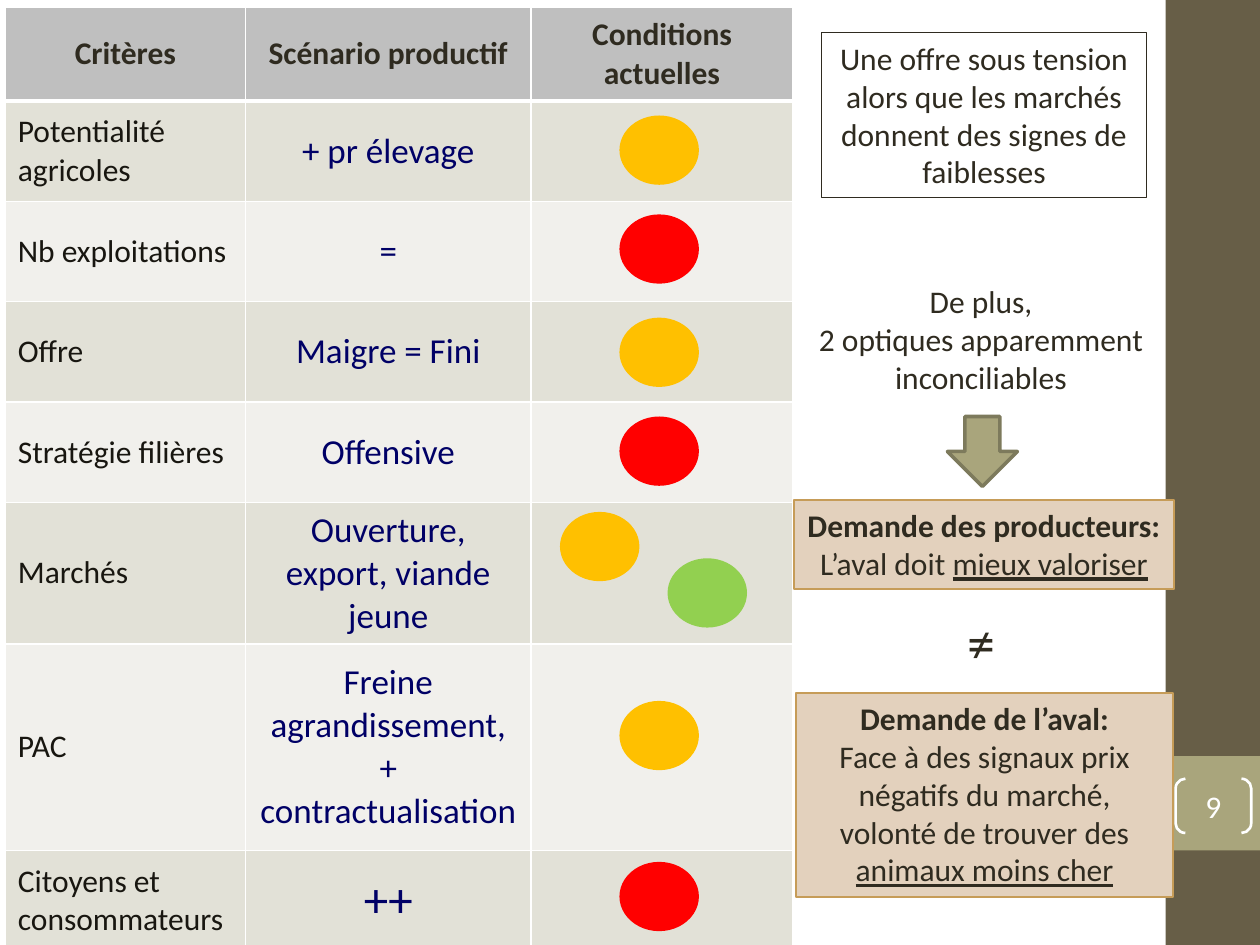
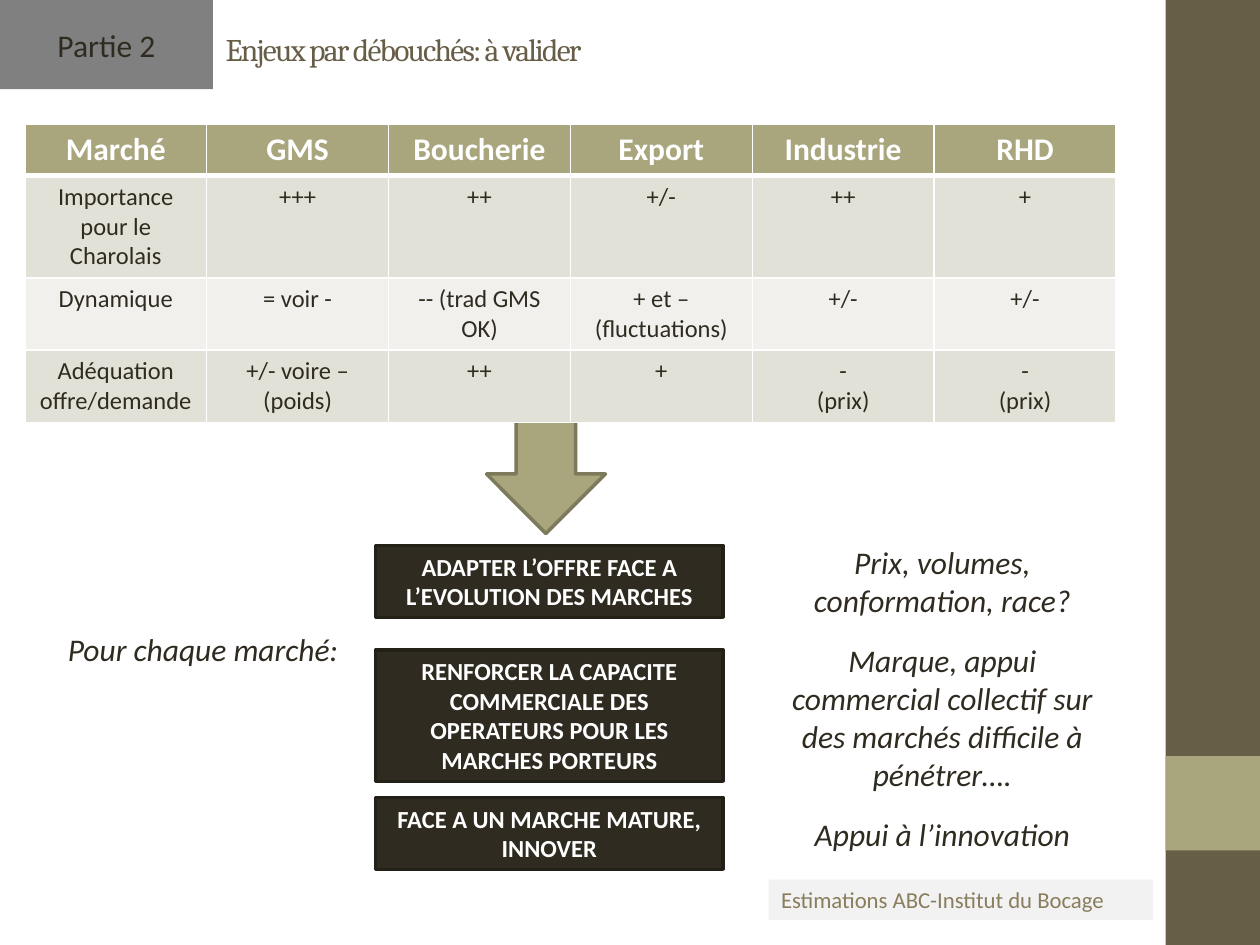
from lxml import etree
from pptx import Presentation
from pptx.dml.color import RGBColor
from pptx.enum import shapes, text
from pptx.oxml import ns
from pptx.util import Pt

WHITE = RGBColor(0xFF, 0xFF, 0xFF)
INK = RGBColor(0x2F, 0x2B, 0x20)
INK_EDGE = RGBColor(0x23, 0x20, 0x18)
CRITERION = RGBColor(0x18, 0x16, 0x10)
NAVY = RGBColor(0x00, 0x00, 0x66)
BROWN = RGBColor(0x67, 0x5E, 0x47)
SOURCE_BROWN = RGBColor(0x89, 0x7D, 0x5D)
OLIVE = RGBColor(0xA9, 0xA5, 0x7C)
OLIVE_EDGE = RGBColor(0x7D, 0x7A, 0x5C)
SAND = RGBColor(0xE3, 0xD1, 0xBD)
SAND_EDGE = RGBColor(0xC6, 0x9C, 0x58)
HEADER_GREY = RGBColor(0xBF, 0xBF, 0xBF)
PART_GREY = RGBColor(0x80, 0x80, 0x80)
SOURCE_GREY = RGBColor(0xF2, 0xF2, 0xF2)
BANDS = RGBColor(0xF1, 0xF0, 0xEC), RGBColor(0xE2, 0xE1, 0xD7)
ORANGE = RGBColor(0xFF, 0xC0, 0x00)
RED = RGBColor(0xFF, 0x00, 0x00)
GREEN = RGBColor(0x92, 0xD0, 0x50)

FORM = shapes.MSO_SHAPE
LEFT, CENTER = text.PP_ALIGN.LEFT, text.PP_ALIGN.CENTER
TOP, MIDDLE = text.MSO_ANCHOR.TOP, text.MSO_ANCHOR.MIDDLE


def write(owner, *paragraphs, size=18, color=INK, font="Calibri", bold=False,
          italic=False, align=CENTER, anchor=TOP, wrap=True):
    frame = owner.text_frame
    if hasattr(owner, "vertical_anchor"):
        owner.vertical_anchor = anchor
    else:
        frame.vertical_anchor = anchor
        frame.word_wrap = wrap
    for index, runs in enumerate(paragraphs):
        paragraph = frame.add_paragraph() if index else frame.paragraphs[0]
        paragraph.alignment = align
        for words, style in [(runs, "")] if isinstance(runs, str) else runs:
            run = paragraph.add_run()
            run.text = words
            run.font.name = font
            run.font.size = Pt(size)
            run.font.color.rgb = color
            run.font.bold = bold or style == "bold"
            run.font.italic = italic
            run.font.underline = style == "underline"


def add_box(slide, form, left, top, width, height, fill=None, line=None, weight=1):
    place = [Pt(value) for value in (left, top, width, height)]
    if form is None:
        return slide.shapes.add_textbox(*place)
    shape = slide.shapes.add_shape(form, *place)
    shape.shadow.inherit = False
    if fill is None:
        shape.fill.background()
    else:
        shape.fill.solid()
        shape.fill.fore_color.rgb = fill
    if line is None:
        shape.line.fill.background()
    else:
        shape.line.color.rgb = line
        shape.line.width = Pt(weight)
    return shape


presentation = Presentation()
presentation.slide_width, presentation.slide_height = Pt(720), Pt(540)
criteria_slide = presentation.slides.add_slide(presentation.slide_layouts[6])
markets_slide = presentation.slides.add_slide(presentation.slide_layouts[5])

master_tree = presentation.slide_master.shapes.element
for number, (top, height, fill) in enumerate([(0, 540, BROWN), (432, 54, OLIVE)]):
    band = add_box(criteria_slide, FORM.RECTANGLE, 666, top, 54, height, fill)
    band.element.nvSpPr.cNvPr.id = 100 + number
    master_tree.insert(2 + number, band.element)

title = markets_slide.shapes.title
title.left, title.top, title.width, title.height = Pt(121.7), Pt(9.4), Pt(540), Pt(36.7)
write(title, "Enjeux par débouchés: à valider", color=BROWN, font="Cambria",
      align=LEFT, anchor=MIDDLE)
title.text_frame.paragraphs[0].runs[0].font._element.set("spc", "-100")

for slide, left, top, width, height in [
    (criteria_slide, 541.4, 238, 40, 40),
    (markets_slide, 278, 230.4, 68, 74.5),
]:
    add_box(slide, FORM.DOWN_ARROW, left, top, width, height, OLIVE, OLIVE_EDGE, 2)

criteria_rows = [
    ["Critères", "Scénario productif", "Conditions actuelles"],
    ["Potentialité agricoles", "+ pr élevage", ""],
    ["Nb exploitations", "=", ""],
    ["Offre", "Maigre = Fini", ""],
    ["Stratégie filières", "Offensive", ""],
    ["Marchés", "Ouverture, export, viande jeune", ""],
    ["PAC", "Freine agrandissement, + contractualisation", ""],
    ["Citoyens et consommateurs", "++", ""],
]
market_rows = [
    ["Marché", "GMS", "Boucherie", "Export", "Industrie", "RHD"],
    ["Importance pour le Charolais", "+++", "++", "+/-", "++", "+"],
    ["Dynamique", "= voir -", "-- (trad GMS OK)", "+ et – (fluctuations)", "+/-", "+/-"],
    ["Adéquation offre/demande", "+/- voire –\n(poids)", "++", "+", "-\n(prix)", "-\n(prix)"],
]
criteria_formats = [
    dict(color=CRITERION, align=LEFT, anchor=MIDDLE),
    dict(color=NAVY, size=20, anchor=MIDDLE),
    dict(anchor=MIDDLE),
]
tables = [
    (criteria_slide, criteria_rows, 3, 4.2, [137.3, 163.2, 149.7],
     [53.5, 57.4, 57.4, 57.4, 57.4, 68.6, 118, 57.4],
     HEADER_GREY, dict(color=INK, bold=True, anchor=MIDDLE), criteria_formats),
    (markets_slide, market_rows, 14.2, 71.2, [103.92] * 6, [29.2] * 4,
     OLIVE, dict(color=WHITE, bold=True), [dict(size=14)] * 6),
]
for slide, rows, left, top, widths, heights, header_fill, header_format, formats in tables:
    table = slide.shapes.add_table(
        len(rows), len(widths), Pt(left), Pt(top), Pt(sum(widths)), Pt(sum(heights))).table
    for column, width in zip(table.columns, widths):
        column.width = Pt(width)
    for row_index, row in enumerate(rows):
        table.rows[row_index].height = Pt(heights[row_index])
        for column_index, words in enumerate(row):
            cell = table.cell(row_index, column_index)
            properties = cell._tc.get_or_add_tcPr()
            for side in ("lnL", "lnR", "lnT", "lnB"):
                thick = (row_index, side) in ((0, "lnB"), (1, "lnT"))
                border = etree.SubElement(properties, ns.qn("a:" + side),
                                          w=str(Pt(3 if thick else 1)))
                paint = etree.SubElement(border, ns.qn("a:solidFill"))
                etree.SubElement(paint, ns.qn("a:srgbClr"), val=str(WHITE))
            cell.fill.solid()
            cell.fill.fore_color.rgb = BANDS[row_index % 2] if row_index else header_fill
            style = dict(formats[column_index] if row_index else header_format)
            if slide is criteria_slide and words == "++":
                style["size"] = 28
            if words:
                write(cell, *words.split("\n"), **style)

for left, top, color in [
    (354, 66, ORANGE), (354, 122.5, RED), (354, 181.5, ORANGE), (354, 238, RED),
    (320, 292.5, ORANGE), (381.5, 319, GREEN), (354, 400.5, ORANGE), (354, 492.5, RED),
]:
    add_box(criteria_slide, FORM.OVAL, left, top, 45.4, 39.6, color)

page_number = add_box(criteria_slide, FORM.DOUBLE_BRACKET, 671.8, 445, 43.2, 31,
                      line=WHITE, weight=1.5)
page_number.adjustments[0] = 0.18
write(page_number, "9", color=WHITE, anchor=MIDDLE)

tension = add_box(criteria_slide, FORM.RECTANGLE, 469.4, 18.7, 185.8, 94.3,
                  line=INK, weight=0.75)
write(tension, "Une offre sous tension alors que les marchés donnent des signes de faiblesses")
views = add_box(criteria_slide, None, 459.4, 157.7, 202.3, 72.7)
write(views, "De plus,", "2 optiques apparemment", "inconciliables", wrap=False)
producers = add_box(criteria_slide, FORM.RECTANGLE, 453.6, 285.8, 217.4, 51, SAND, SAND_EDGE)
write(producers, [("Demande des producteurs:", "bold")],
      [("L’aval doit ", ""), ("mieux valoriser", "underline")], wrap=False)
unequal = add_box(criteria_slide, None, 545.8, 343.4, 31, 46)
write(unequal, "≠", size=32, align=LEFT, wrap=False)
downstream = add_box(criteria_slide, FORM.RECTANGLE, 455, 396, 215.3, 116.6, SAND, SAND_EDGE)
write(downstream, [("Demande de l’aval:", "bold")],
      [("Face à des signaux prix négatifs du marché, volonté de trouver des ", ""),
       ("animaux moins cher", "underline")])

part = add_box(markets_slide, FORM.RECTANGLE, 0, 0, 121.7, 51, PART_GREY)
write(part, "Partie 2", anchor=MIDDLE)
source = add_box(markets_slide, FORM.RECTANGLE, 439.2, 502.6, 219.6, 23, SOURCE_GREY)
write(source, "Estimations ABC-Institut du Bocage", size=13, color=SOURCE_BROWN, align=LEFT)
each_market = add_box(markets_slide, None, 31.7, 356.4, 170.6, 29)
write(each_market, "Pour chaque marché:", italic=True, align=LEFT, wrap=False)

for top, height, goal, lever_top, lever_height, lever in [
    (311.8, 41, "ADAPTER L’OFFRE FACE A L’EVOLUTION DES MARCHES",
     306.7, 51, "Prix, volumes, conformation, race?"),
    (371.5, 75, "RENFORCER LA CAPACITE COMMERCIALE DES OPERATEURS POUR LES MARCHES PORTEURS",
     362.9, 94.3, "Marque, appui commercial collectif sur des marchés difficile à pénétrer…."),
    (455.8, 41, "FACE A UN MARCHE MATURE, INNOVER",
     462.2, 29, "Appui à l’innovation"),
]:
    goal_box = add_box(markets_slide, FORM.RECTANGLE, 214.6, top, 198.7, height,
                       INK, INK_EDGE, 2)
    write(goal_box, goal, size=14, color=WHITE, bold=True)
    write(add_box(markets_slide, None, 439.2, lever_top, 198.7, lever_height),
          lever, italic=True)

presentation.save("out.pptx")
